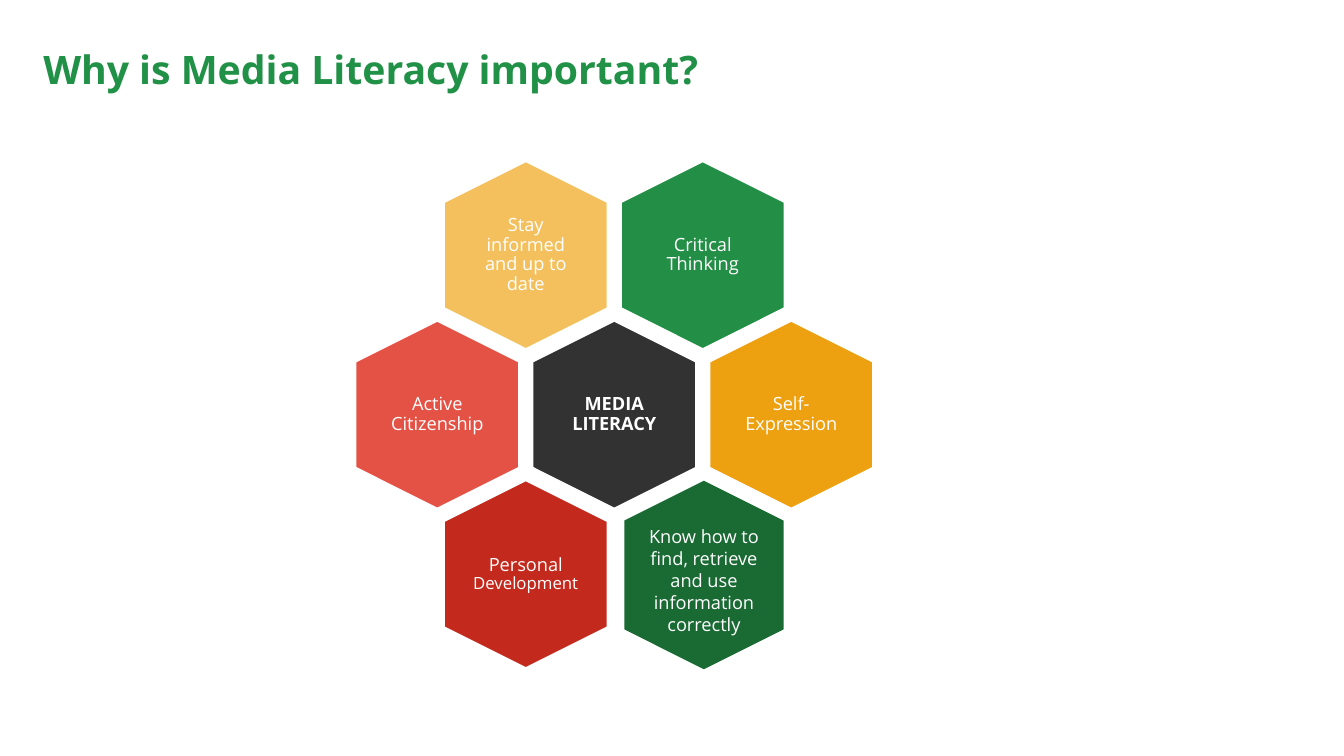
import pptx
import pptx.util
import pptx.dml.color
import pptx.enum.shapes
import pptx.enum.text
from pptx.util import Cm, Pt

COLOURS = {
    "title": "209146", "white": "FFFFFF", "charcoal": "323232",
    "green": "238E46", "dark green": "1A6A34", "yellow": "F4C05E",
    "orange": "EDA110", "coral": "E45246", "red": "C3291C",
}
CENTRE_X, CENTRE_Y = 15.48, 10.45
HALF_PITCH, ROW_PITCH = 2.23, 4.02
HEX_LENGTH, HEX_WIDTH = 4.72, 4.11
FONT = {"name": "Open Sans", "size": Pt(13), "bold": False}

# Column in half pitches and row from the centre, colour, paragraphs, run formats
REASONS = [
    (1, -1, "green", ["Critical Thinking"]),
    (-1, -1, "yellow", ["Stay informed and up to date"]),
    (0, 0, "charcoal", ["MEDIA LITERACY"]),
    (2, 0, "orange", ["Self- Expression"]),
    (-2, 0, "coral", ["Active Citizenship"]),
    (-1, 1, "red", ["Personal Development"]),
]
KNOW_HOW = ["Know how to find, retrieve", "and use information", "correctly"]


def rgb(name):
    return pptx.dml.color.RGBColor.from_string(COLOURS[name])


def set_values(target, values):
    for name, value in values.items():
        setattr(target, name, value)


def format_frame(tf, inset=0):
    set_values(tf, {
        "word_wrap": True,
        "auto_size": pptx.enum.text.MSO_AUTO_SIZE.NONE,
        "vertical_anchor": pptx.enum.text.MSO_ANCHOR.MIDDLE,
        "margin_left": Cm(inset), "margin_right": Cm(inset),
        "margin_top": Cm(inset), "margin_bottom": Cm(inset),
    })


def add_run(p, text, colour, **changes):
    r = p.add_run()
    r.text = text
    set_values(r.font, {**FONT, **changes})
    r.font.color.rgb = rgb(colour)


def box_around(x, y, width, height):
    return Cm(x - width / 2), Cm(y - height / 2), Cm(width), Cm(height)


def grid_point(column, row):
    return CENTRE_X + column * HALF_PITCH, CENTRE_Y + row * ROW_PITCH


def add_hexagon(shapes, x, y, colour, length=HEX_LENGTH, width=HEX_WIDTH, outlined=True):
    """Draw a hexagon standing on its point."""
    sp = shapes.add_shape(pptx.enum.shapes.MSO_SHAPE.HEXAGON, *box_around(x, y, length, width))
    sp.rotation = 90
    sp.adjustments[0] = 0.25
    sp.shadow.inherit = False
    sp.fill.solid()
    sp.fill.fore_color.rgb = rgb(colour)
    if outlined:
        sp.line.color.rgb = rgb("white")
        sp.line.width = Pt(1)
    else:
        sp.line.fill.background()


def add_label(shapes, x, y, paragraphs, width=2.82, height=3.25, spacing=0.9):
    tf = shapes.add_textbox(*box_around(x, y, width, height)).text_frame
    format_frame(tf)
    for i, text in enumerate(paragraphs):
        p = tf.add_paragraph() if i else tf.paragraphs[0]
        set_values(p, {"alignment": pptx.enum.text.PP_ALIGN.CENTER, "line_spacing": spacing})
        if text == "Personal Development":
            add_run(p, "Personal ", "white")
            add_run(p, "Development", "white", size=Pt(12))
        else:
            add_run(p, text, "white", bold=text.isupper())


def add_title(s, text):
    sp = s.shapes.title
    set_values(sp, {"left": Cm(0.94), "top": Cm(0.81), "width": Cm(32), "height": Cm(1.98)})
    format_frame(sp.text_frame, 0.15)
    p = sp.text_frame.paragraphs[0]
    set_values(p, {"alignment": pptx.enum.text.PP_ALIGN.LEFT, "line_spacing": 0.9})
    add_run(p, text, "title", size=Pt(28), bold=True)


def main():
    prs = pptx.Presentation()
    set_values(prs, {"slide_width": Cm(33.87), "slide_height": Cm(19.05)})
    s = prs.slides.add_slide(prs.slide_layouts[5])
    add_title(s, "Why is Media Literacy important?")

    shapes = s.shapes.add_group_shape().shapes
    for column, row, colour, paragraphs in REASONS:
        x, y = grid_point(column, row)
        add_hexagon(shapes, x, y, colour)
        add_label(shapes, x, y, paragraphs)

    x, y = grid_point(1, 1)
    add_hexagon(shapes, x + 0.03, y + 0.02, "dark green", 4.75, 4.01, outlined=False)
    add_label(shapes, x + 0.03, y + 0.15, KNOW_HOW, width=3.5, spacing=1.0)
    prs.save("out.pptx")


if __name__ == "__main__":
    main()
